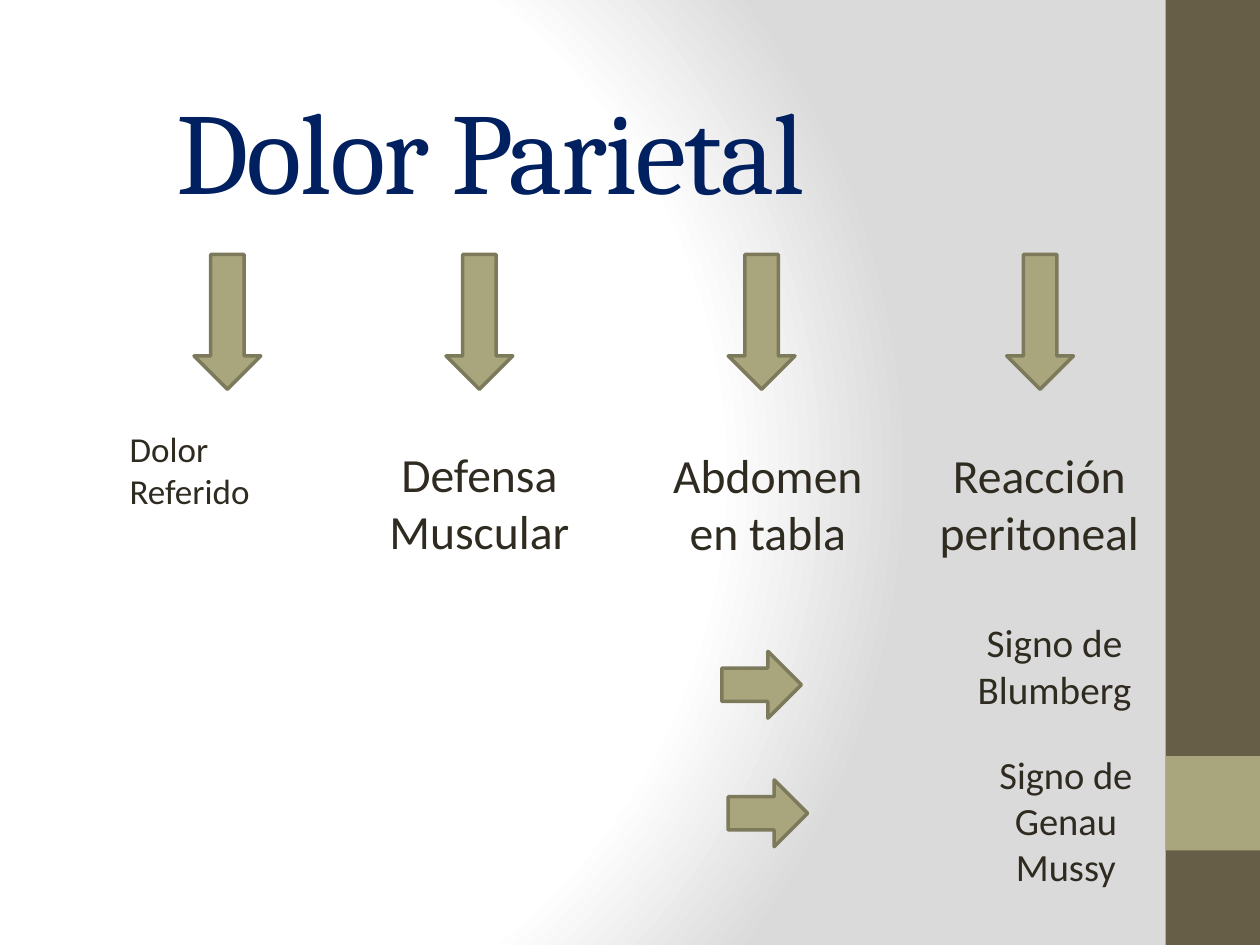
from lxml.etree import fromstring
from pptx import Presentation
from pptx.dml.color import RGBColor
from pptx.enum.shapes import MSO_SHAPE
from pptx.enum.text import MSO_ANCHOR, PP_ALIGN
from pptx.util import Inches, Pt

NAVY = RGBColor(0x00, 0x20, 0x60)
INK = RGBColor(0x2F, 0x2B, 0x20)
BROWN = RGBColor(0x67, 0x5E, 0x47)
OLIVE = RGBColor(0xA9, 0xA5, 0x7C)
OLIVE_DARK = RGBColor(0x7D, 0x7A, 0x5C)
WHITE = RGBColor(0xFF, 0xFF, 0xFF)
GREY = RGBColor(0xDA, 0xDA, 0xDA)

NS = ('xmlns:a="http://schemas.openxmlformats.org/drawingml/2006/main" '
      'xmlns:p="http://schemas.openxmlformats.org/presentationml/2006/main"')

BARS = [(0, 7.5, BROWN), (6, 0.75, OLIVE)]
DOWN_ARROW_LEFTS = [1.54, 3.54, 5.78, 7.99]
RIGHT_ARROWS = [(5.73, 5.17), (5.78, 6.19)]
LABELS = [
    ("Dolor Referido", (0.93, 3.34, 1.73, 1.18), 20, PP_ALIGN.LEFT),
    ("Defensa Muscular", (2.94, 3.48, 1.73, 1.18), 27.2, PP_ALIGN.CENTER),
    ("Abdomen en tabla", (5.23, 3.49, 1.73, 1.18), 27.2, PP_ALIGN.CENTER),
    ("Reacción peritoneal", (7.28, 3.49, 1.94, 1.18), 27.2, PP_ALIGN.CENTER),
    ("Signo de Blumberg", (7.58, 4.86, 1.58, 0.7), 22.4, PP_ALIGN.CENTER),
    ("Signo de Genau Mussy", (7.68, 5.91, 1.56, 1.07), 22, PP_ALIGN.CENTER),
]


def set_background(s):
    """Radial gradient, which python-pptx cannot set directly."""
    stops = "".join(
        f'<a:gs pos="{pos * 1000}"><a:srgbClr val="{color}"/></a:gs>'
        for pos, color in [(0, WHITE), (75, WHITE), (100, GREY)])
    bg = fromstring(
        f'<p:bg {NS}><p:bgPr><a:gradFill rotWithShape="1"><a:gsLst>{stops}</a:gsLst>'
        '<a:path path="circle"><a:fillToRect l="20000" t="50000" r="100000" b="50000"/>'
        '</a:path></a:gradFill><a:effectLst/></p:bgPr></p:bg>')
    s.element.cSld.insert(0, bg)


def format_text(tf, text, size, font, color, align):
    tf.word_wrap = True
    p = tf.paragraphs[0]
    p.alignment = align
    r = p.add_run()
    r.text = text
    values = {"name": font, "size": Pt(size), "bold": False}
    for name, value in values.items():
        setattr(r.font, name, value)
    r.font.color.rgb = color
    return r


def add_title(s, text):
    sp = s.shapes.title
    box = {"left": 1.3, "top": 0.44, "width": 7.56, "height": 1.34}
    for name, value in box.items():
        setattr(sp, name, Inches(value))
    r = format_text(sp.text_frame, text, 66, "Cambria", NAVY, PP_ALIGN.LEFT)
    r.font._element.set("spc", "-100")
    sp.text_frame.vertical_anchor = MSO_ANCHOR.BOTTOM


def add_label(s, text, box, size, align):
    sp = s.shapes.add_textbox(*map(Inches, box))
    format_text(sp.text_frame, text, size, "Calibri", INK, align)


def add_block(s, kind, box, fill, line=None):
    sp = s.shapes.add_shape(kind, *map(Inches, box))
    sp.shadow.inherit = False
    sp.fill.solid()
    sp.fill.fore_color.rgb = fill
    if line is None:
        sp.line.fill.background()
    else:
        sp.line.color.rgb = line
        sp.line.width = Pt(2)


def main():
    prs = Presentation()
    prs.slide_width, prs.slide_height = Inches(10), Inches(7.5)
    s = prs.slides.add_slide(prs.slide_layouts[5])
    set_background(s)
    for top, height, fill in BARS:
        add_block(s, MSO_SHAPE.RECTANGLE, (9.25, top, 0.75, height), fill)
    add_title(s, "Dolor Parietal")
    for left in DOWN_ARROW_LEFTS:
        add_block(s, MSO_SHAPE.DOWN_ARROW, (left, 2.02, 0.53, 1.07), OLIVE, OLIVE_DARK)
    for left, top in RIGHT_ARROWS:
        add_block(s, MSO_SHAPE.RIGHT_ARROW, (left, top, 0.63, 0.53), OLIVE, OLIVE_DARK)
    for label in LABELS:
        add_label(s, *label)
    prs.save("out.pptx")


if __name__ == "__main__":
    main()
